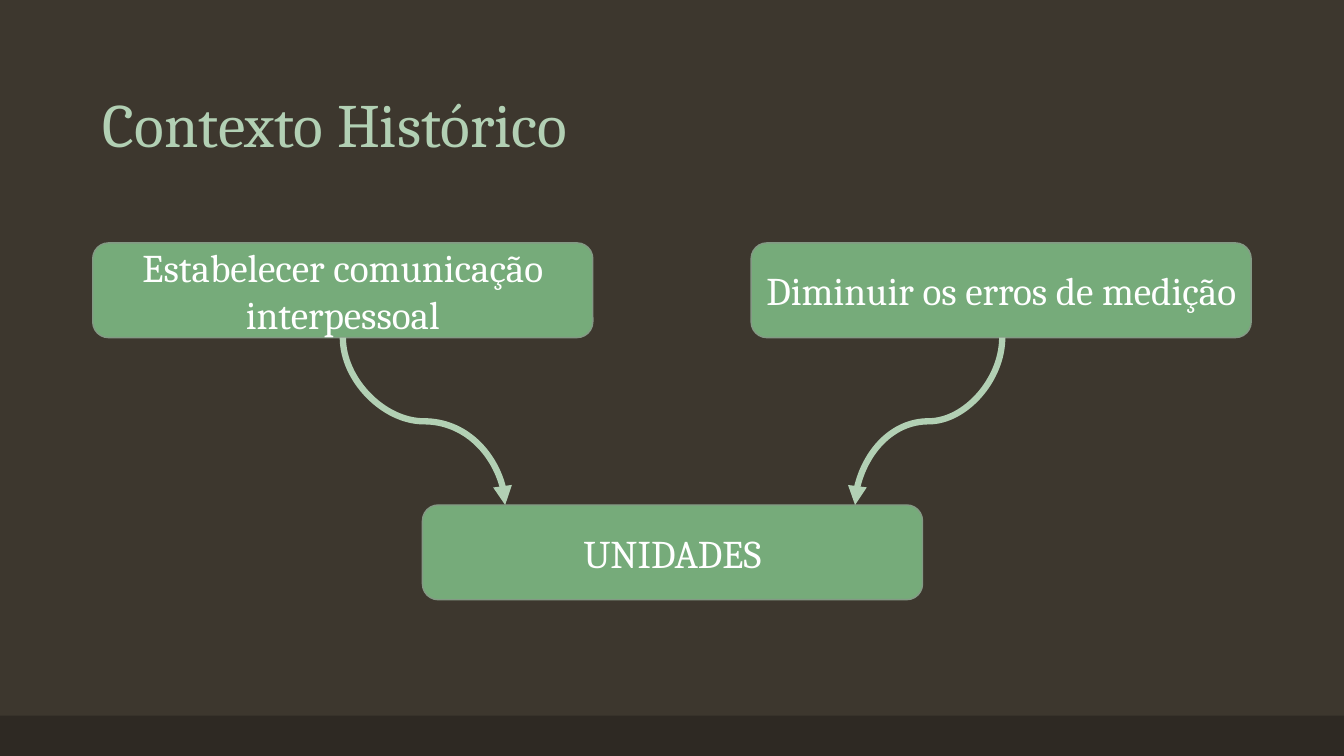
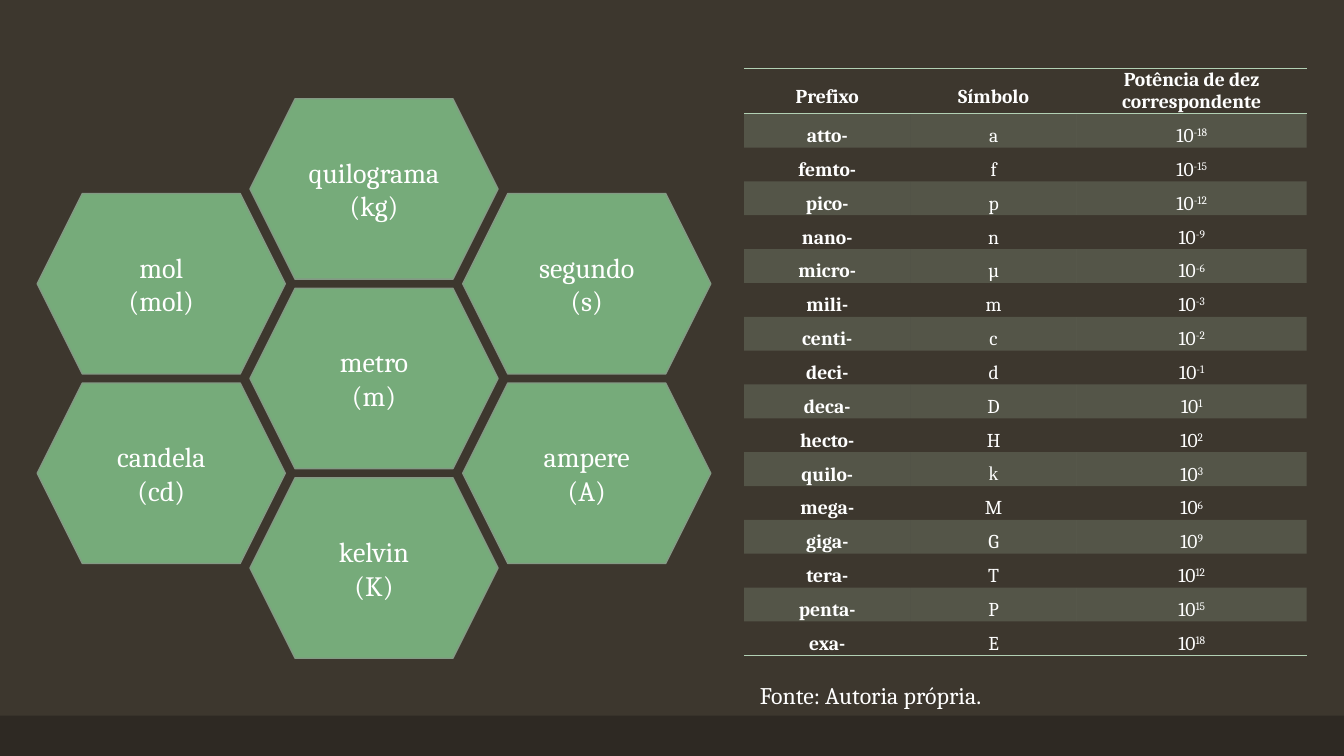
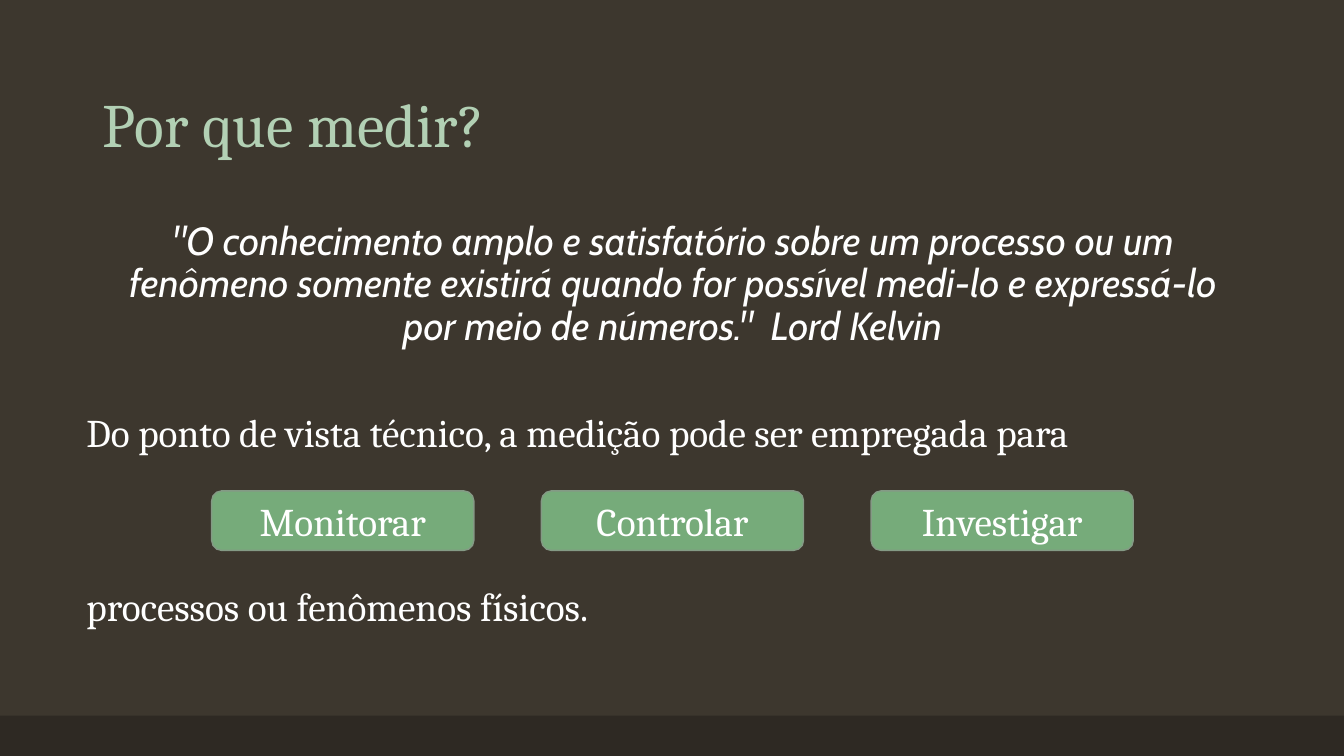
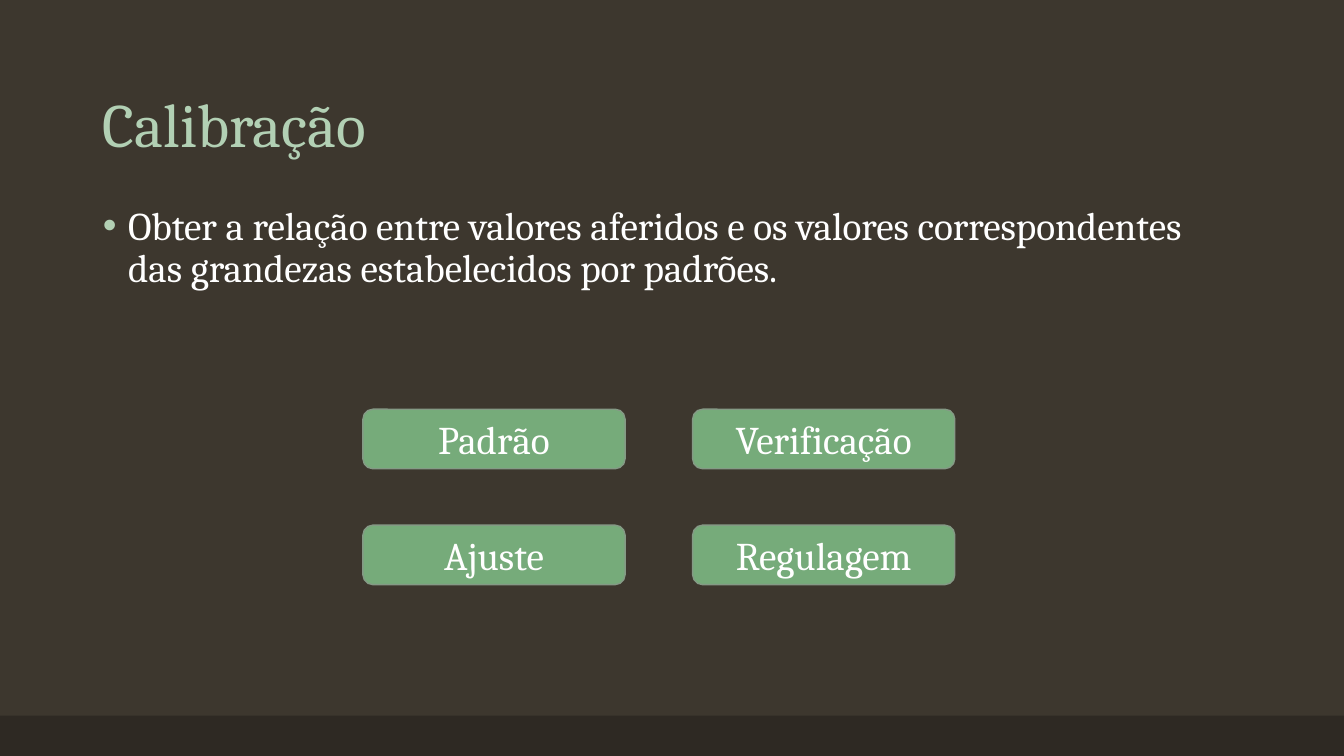
from dataclasses import dataclass
from typing import Any, Sequence

import lxml.etree
import pptx
import pptx.dml.color
import pptx.enum.shapes
import pptx.enum.text
import pptx.oxml.ns
import pptx.util

Inches = pptx.util.Inches
Align = pptx.enum.text.PP_ALIGN
Anchor = pptx.enum.text.MSO_ANCHOR
Preset = pptx.enum.shapes.MSO_SHAPE


@dataclass(frozen=True)
class Theme:
    background: str = "3D372E"
    band: str = "2E2923"
    accent: str = "B2D0B4"
    fill: str = "76AB7A"
    outline: str = "849A85"
    text: str = "FFFFFF"
    font: str = "Cambria"
    quote_font: str = "Cabin"
    symbol_font: str = "Times New Roman"
    title_size: float = 44
    body_size: float = 28
    unit_size: float = 20
    source_size: float = 17
    table_size: float = 14


@dataclass(frozen=True)
class Box:
    left: float
    top: float
    width: float
    height: float

    def lengths(self) -> tuple[int, int, int, int]:
        return Inches(self.left), Inches(self.top), Inches(self.width), Inches(self.height)


@dataclass(frozen=True)
class Unit:
    name: str
    symbol: str
    column: int
    half_row: int


@dataclass(frozen=True)
class Prefix:
    name: str
    symbol: str
    exponent: int


THEME = Theme()
SLIDE_WIDTH, SLIDE_HEIGHT = 13.33, 7.5
TITLE_BOX = Box(0.92, 0.4, 11.5, 1.25)
BUTTON_WIDTH, BUTTON_HEIGHT = 2.6, 0.59
BUTTON_STEP_X, BUTTON_STEP_Y = 3.27, 1.15
NO_STYLE_TABLE = "{2D5ABB26-0587-4C30-8999-92F81FD0307C}"

UNITS = [
    Unit("mol", "mol", 0, 1),
    Unit("metro", "m", 1, 2),
    Unit("candela", "cd", 0, 3),
    Unit("kelvin", "K", 1, 4),
    Unit("ampere", "A", 2, 3),
    Unit("segundo", "s", 2, 1),
    Unit("quilograma", "kg", 1, 0),
]

PREFIXES = [
    Prefix("atto-", "a", -18),
    Prefix("femto-", "f", -15),
    Prefix("pico-", "p", -12),
    Prefix("nano-", "n", -9),
    Prefix("micro-", "µ", -6),
    Prefix("mili-", "m", -3),
    Prefix("centi-", "c", -2),
    Prefix("deci-", "d", -1),
    Prefix("deca-", "D", 1),
    Prefix("hecto-", "H", 2),
    Prefix("quilo-", "k", 3),
    Prefix("mega-", "M", 6),
    Prefix("giga-", "G", 9),
    Prefix("tera-", "T", 12),
    Prefix("penta-", "P", 15),
    Prefix("exa-", "E", 18),
]


def rgb(color: str) -> Any:
    return pptx.dml.color.RGBColor.from_string(color)


def add_child(parent: Any, tag: str, **attributes: str) -> Any:
    child = lxml.etree.SubElement(parent, pptx.oxml.ns.qn(tag))
    for name, value in attributes.items():
        child.set(name, value)
    return child


def write_text(
    frame: Any,
    text: str,
    *,
    size: float,
    font: str = THEME.font,
    color: str = THEME.text,
    bold: bool = False,
    italic: bool = False,
    align: Any = Align.LEFT,
    anchor: Any = None,
    line_spacing: float = 1.0,
    space_before: float = 0,
    exponent: str = "",
) -> None:
    frame.word_wrap = True
    if anchor is not None:
        frame.vertical_anchor = anchor
    frame.text = text
    if exponent:
        superscript = frame.paragraphs[-1].add_run()
        superscript.text = exponent
        superscript.font._element.set("baseline", "30000")
    for paragraph in frame.paragraphs:
        paragraph.alignment = align
        paragraph.line_spacing = line_spacing
        paragraph.space_before = pptx.util.Pt(space_before)
        for run in paragraph.runs:
            run.font.name = font
            run.font.size = pptx.util.Pt(size)
            run.font.bold = bold
            run.font.italic = italic
            run.font.color.rgb = rgb(color)


def set_bullet(paragraph: Any, bullet: str = "") -> None:
    properties = paragraph._p.get_or_add_pPr()
    indent = Inches(0.25) if bullet else 0
    properties.set("marL", str(indent))
    properties.set("indent", str(-indent))
    if bullet:
        color = add_child(properties, "a:buClr")
        add_child(color, "a:srgbClr", val=THEME.accent)
        add_child(properties, "a:buFont", typeface="Arial")
        add_child(properties, "a:buChar", char=bullet)
    else:
        add_child(properties, "a:buNone")


def fill_placeholder(placeholder: Any, box: Box, text: str, **text_format: Any) -> None:
    placeholder.left, placeholder.top, placeholder.width, placeholder.height = box.lengths()
    placeholder.text_frame.auto_size = pptx.enum.text.MSO_AUTO_SIZE.NONE
    write_text(placeholder.text_frame, text, line_spacing=0.9, **text_format)


def add_slide(presentation: Any, layout_index: int, title: str = "") -> Any:
    slide = presentation.slides.add_slide(presentation.slide_layouts[layout_index])
    if title:
        fill_placeholder(slide.shapes.title, TITLE_BOX, title, size=THEME.title_size,
                         color=THEME.accent, anchor=Anchor.BOTTOM)
    return slide


def add_body(slide: Any, box: Box, text: str, bullet: str = "", **text_format: Any) -> None:
    body = slide.placeholders[1]
    fill_placeholder(body, box, text, size=THEME.body_size, anchor=Anchor.TOP,
                     space_before=18, **text_format)
    set_bullet(body.text_frame.paragraphs[0], bullet)


def add_text(slide: Any, box: Box, text: str, **text_format: Any) -> None:
    text_box = slide.shapes.add_textbox(*box.lengths())
    write_text(text_box.text_frame, text, line_spacing=0.9, space_before=18, **text_format)


def add_node(shapes: Any, box: Box, text: str, preset: Any = Preset.ROUNDED_RECTANGLE,
             size: float = THEME.body_size) -> None:
    shape = shapes.add_shape(preset, *box.lengths())
    shape.shadow.inherit = False
    shape.fill.solid()
    shape.fill.fore_color.rgb = rgb(THEME.fill)
    shape.line.color.rgb = rgb(THEME.outline)
    shape.line.width = pptx.util.Pt(1)
    write_text(shape.text_frame, text, size=size, align=Align.CENTER, anchor=Anchor.MIDDLE)


def add_buttons(slide: Any, left: float, top: float, rows: Sequence[Sequence[str]]) -> None:
    for row, labels in enumerate(rows):
        for column, label in enumerate(labels):
            box = Box(left + column * BUTTON_STEP_X, top + row * BUTTON_STEP_Y,
                      BUTTON_WIDTH, BUTTON_HEIGHT)
            add_node(slide.shapes, box, label)


def add_downward_curve(slide: Any, start: tuple[float, float], end: tuple[float, float]) -> None:
    center_x, center_y = (start[0] + end[0]) / 2, (start[1] + end[1]) / 2
    half_drop = (end[1] - start[1]) / 2
    half_shift = abs(end[0] - start[0]) / 2
    to_right = end[0] > start[0]
    reach = half_drop if to_right else -half_drop
    connector = slide.shapes.add_connector(
        pptx.enum.shapes.MSO_CONNECTOR.CURVE,
        Inches(center_x + reach), Inches(center_y - half_shift),
        Inches(center_x - reach), Inches(center_y + half_shift),
    )
    properties = connector._element.spPr
    properties.xfrm.set("rot", str((270 if to_right else 90) * 60000))
    connector.line.color.rgb = rgb(THEME.accent)
    connector.line.width = pptx.util.Pt(4.5)
    add_child(connector.line._get_or_add_ln(), "a:tailEnd", type="triangle")
    add_child(properties, "a:effectLst")


def style_cell(cell: Any, shaded: bool, edges: Sequence[str]) -> None:
    cell.margin_left = cell.margin_right = Inches(0.07)
    cell.margin_top = cell.margin_bottom = 0
    properties = cell._tc.get_or_add_tcPr()
    for edge in edges:
        line = add_child(properties, edge, w=str(pptx.util.Pt(1)))
        add_child(add_child(line, "a:solidFill"), "a:srgbClr", val=THEME.accent)
    if shaded:
        cell.fill.solid()
        cell.fill.fore_color.rgb = rgb(THEME.accent)
        color = properties.find(pptx.oxml.ns.qn("a:solidFill"))[0]
        add_child(color, "a:alpha", val="20000")
    else:
        cell.fill.background()


def add_prefix_table(slide: Any) -> None:
    box = Box(7.38, 0.68, 5.59, 6.07)
    frame = slide.shapes.add_table(len(PREFIXES) + 1, 3, *box.lengths())
    table = frame.table
    table.first_row = table.horz_banding = False
    table._tbl.tblPr.find(pptx.oxml.ns.qn("a:tableStyleId")).text = NO_STYLE_TABLE
    for column, width in zip(table.columns, (1.65, 1.65, 2.28)):
        column.width = Inches(width)
    for row in table.rows:
        row.height = Inches(0.28)
    frame.height = Inches(box.height)

    headings = ("Prefixo", "Símbolo", "Potência de dez correspondente")
    for column, heading in enumerate(headings):
        cell = table.cell(0, column)
        style_cell(cell, False, ("a:lnT", "a:lnB"))
        cell.vertical_anchor = Anchor.MIDDLE
        write_text(cell.text_frame, heading, size=THEME.table_size, bold=True,
                   align=Align.CENTER, line_spacing=1.0 if column == 2 else 1.5)

    for row, prefix in enumerate(PREFIXES, start=1):
        edges = ("a:lnB",) if row == len(PREFIXES) else ()
        for column, text in enumerate((prefix.name, prefix.symbol, "10")):
            cell = table.cell(row, column)
            style_cell(cell, row % 2 == 1, edges)
            write_text(cell.text_frame, text, size=THEME.table_size, bold=column == 0,
                       font=THEME.symbol_font if text == "k" else THEME.font,
                       align=Align.CENTER, line_spacing=1.5,
                       exponent=str(prefix.exponent) if column == 2 else "")


def style_master(presentation: Any, slide: Any) -> None:
    master = presentation.slide_master
    master.background.fill.solid()
    master.background.fill.fore_color.rgb = rgb(THEME.background)
    band = slide.shapes.add_shape(Preset.RECTANGLE, *Box(0, 7.1, SLIDE_WIDTH, 0.4).lengths())
    band.shadow.inherit = False
    band.fill.solid()
    band.fill.fore_color.rgb = rgb(THEME.band)
    band.line.fill.background()
    master.shapes.element.insert(2, band.element)


def build_context(presentation: Any) -> Any:
    slide = add_slide(presentation, 5, "Contexto Histórico")
    width, height, top = 4.96, 0.94, 2.41
    add_node(slide.shapes, Box(0.92, top, width, height), "Estabelecer comunicação interpessoal")
    add_node(slide.shapes, Box(7.45, top, width, height), "Diminuir os erros de medição")
    add_node(slide.shapes, Box(4.19, 5.01, width, height), "UNIDADES")
    add_downward_curve(slide, (9.94, 3.35), (8.48, 5.01))
    add_downward_curve(slide, (3.4, 3.35), (5.01, 5.01))
    return slide


def build_units(presentation: Any) -> None:
    slide = add_slide(presentation, 6)
    honeycomb = slide.shapes.add_group_shape()
    for unit in UNITS:
        box = Box(0.37 + unit.column * 2.11, 0.98 + unit.half_row * 0.94, 2.46, 1.79)
        add_node(honeycomb.shapes, box, f"{unit.name}\n({unit.symbol})",
                 Preset.HEXAGON, THEME.unit_size)
    add_prefix_table(slide)
    add_text(slide, Box(7.06, 6.74, 3.15, 0.34), "Fonte: Autoria própria.",
             size=THEME.source_size, align=Align.CENTER, anchor=Anchor.MIDDLE)


def build_reasons(presentation: Any) -> None:
    slide = add_slide(presentation, 1, "Por que medir?")
    quote = ('"O conhecimento amplo e satisfatório sobre um processo ou um fenômeno somente '
             'existirá quando for possível medi-lo e expressá-lo por meio de números."  Lord Kelvin')
    add_body(slide, Box(0.92, 2.15, 11.5, 1.44), quote, font=THEME.quote_font,
             italic=True, align=Align.CENTER)
    add_buttons(slide, 2.1, 4.87, [["Monitorar", "Controlar", "Investigar"]])
    add_text(slide, Box(0.76, 4.05, 11.66, 0.57),
             "Do ponto de vista técnico, a medição pode ser empregada para", size=THEME.body_size)
    add_text(slide, Box(0.76, 5.78, 5.93, 0.57),
             "processos ou fenômenos físicos.", size=THEME.body_size)


def build_calibration(presentation: Any) -> None:
    slide = add_slide(presentation, 1, "Calibração")
    add_body(slide, Box(0.92, 2, 11.5, 0.97),
             "Obter a relação entre valores aferidos e os valores correspondentes das grandezas "
             "estabelecidos por padrões.", bullet="•")
    add_buttons(slide, 3.6, 4.06, [["Padrão", "Verificação"], ["Ajuste", "Regulagem"]])


def main() -> None:
    presentation = pptx.Presentation()
    presentation.slide_width = Inches(SLIDE_WIDTH)
    presentation.slide_height = Inches(SLIDE_HEIGHT)
    first_slide = build_context(presentation)
    style_master(presentation, first_slide)
    build_units(presentation)
    build_reasons(presentation)
    build_calibration(presentation)
    presentation.save("out.pptx")


if __name__ == "__main__":
    main()
